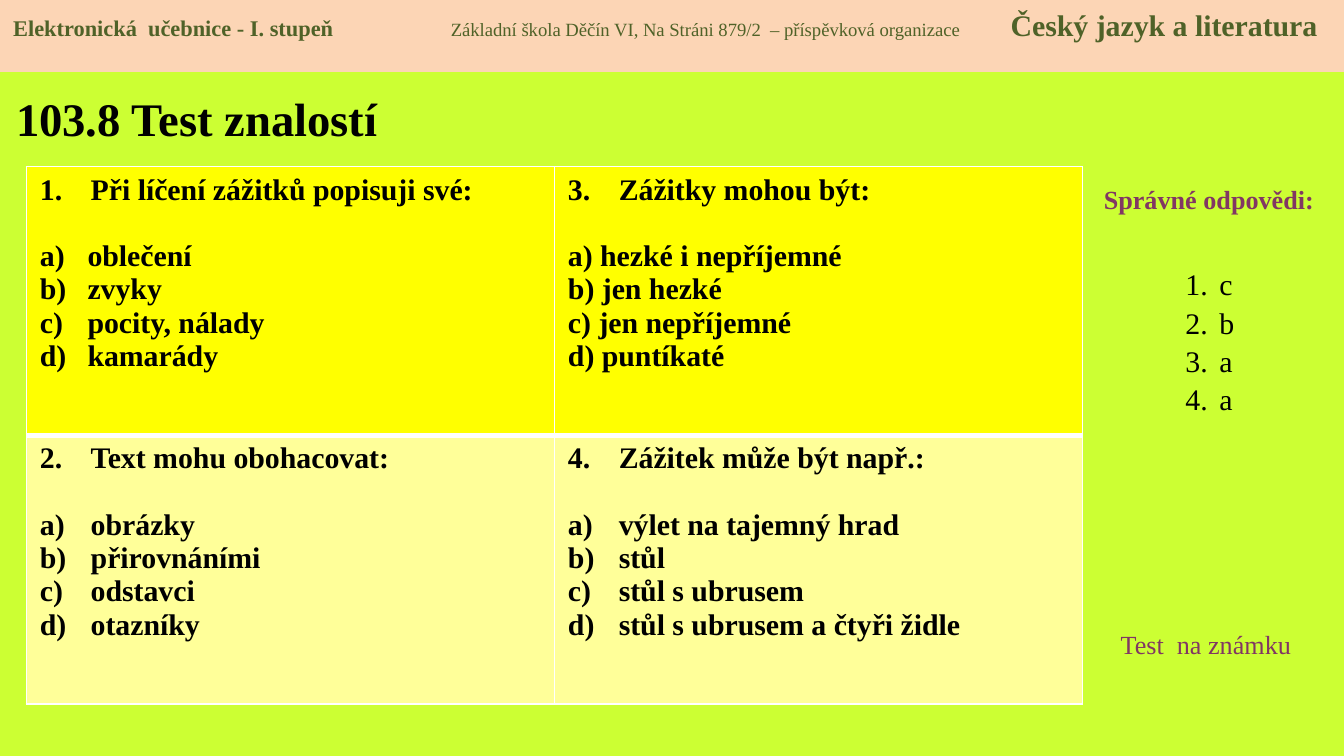
from dataclasses import dataclass
from typing import Optional

from lxml.etree import SubElement
from pptx import Presentation
from pptx.dml.color import RGBColor
from pptx.enum.shapes import MSO_SHAPE
from pptx.enum.text import MSO_ANCHOR, MSO_AUTO_SIZE, PP_ALIGN
from pptx.oxml.ns import qn
from pptx.util import Cm, Pt


@dataclass(frozen=True)
class Theme:
    face: str = "Times New Roman"
    back: str = "CCFF33"
    band: str = "FCD5B5"
    ink: str = "000000"
    green: str = "4F6228"
    plum: str = "813763"
    white: str = "FFFFFF"
    rows: tuple = ("FFFF00", "FFFF99")
    title: float = 25
    large: float = 16
    label: float = 14
    name: float = 12
    small: float = 10


@dataclass(frozen=True)
class Quiz:
    row: int
    col: int
    number: int
    ask: str
    options: tuple
    indent: Optional[float] = 0.96  # None: the letters are part of the text


@dataclass(frozen=True)
class Label:
    text: str
    box: tuple
    bold: bool
    align: PP_ALIGN


THEME = Theme()
QUIZZES = (
    Quiz(0, 0, 1, "Při líčení zážitků popisuji své:",
         ("oblečení", "zvyky", "pocity, nálady", "kamarády"), 0.9),
    Quiz(0, 1, 3, "Zážitky mohou být:",
         ("a) hezké i nepříjemné", "b) jen hezké",
          "c) jen nepříjemné", "d) puntíkaté"), None),
    Quiz(1, 0, 2, "Text mohu obohacovat:",
         ("obrázky", "přirovnáními", "odstavci", "otazníky")),
    Quiz(1, 1, 4, "Zážitek může být např.:",
         ("výlet na tajemný hrad", "stůl", "stůl s ubrusem",
          "stůl s ubrusem a čtyři židle")),
)
LABELS = (
    Label("Správné odpovědi:", (20.45, 3.35, 4.8, 0.86), True, PP_ALIGN.CENTER),
    Label("Test  na známku", (20.93, 11.76, 3.99, 0.86), False, PP_ALIGN.LEFT),
)
HEADER = (
    ("Elektronická  učebnice - I. stupeň", THEME.name, True),
    ("\tZákladní škola Děčín VI, Na Stráni 879/2  – příspěvková organizace",
     THEME.small, False),
    ("\tČeský jazyk a literatura", THEME.large, True),
)
TABS = (8.27, 18.85)
ANSWERS = ("c", "b", "a", "a")


def color(code: str) -> RGBColor:
    return RGBColor.from_string(code)


def style(font, size: float, code: str, bold: bool = False) -> None:
    font.name, font.size, font.bold = THEME.face, Pt(size), bold
    font.color.rgb = color(code)


def place(shape, box: tuple) -> None:
    shape.left, shape.top, shape.width, shape.height = map(Cm, box)


def count(para, kind: str, indent: float, start: int = 1) -> None:
    """Number a paragraph automatically with a hanging indent."""
    props = para._p.get_or_add_pPr()
    props.set("marL", str(Cm(indent)))
    props.set("indent", str(-Cm(indent)))
    mark = SubElement(props, qn("a:buAutoNum"), type=kind)
    if start > 1:
        mark.set("startAt", str(start))


def border(cell, low: bool, high: bool) -> None:
    """Draw white edges, with a thick one on the line between the rows."""
    props = cell._tc.get_or_add_tcPr()
    for side, thick in (("L", False), ("R", False), ("T", high), ("B", low)):
        line = SubElement(props, qn(f"a:ln{side}"), w=str(Pt(3 if thick else 1)))
        fill = SubElement(line, qn("a:solidFill"))
        SubElement(fill, qn("a:srgbClr"), val=THEME.white)


def draw_quiz(table, quiz: Quiz) -> None:
    cell = table.cell(quiz.row, quiz.col)
    border(cell, quiz.row == 0, quiz.row == 1)
    cell.fill.solid()
    cell.fill.fore_color.rgb = color(THEME.rows[quiz.row])
    frame = cell.text_frame
    frame.text = "\n".join((quiz.ask, *quiz.options))
    first, *rest = frame.paragraphs
    count(first, "arabicPeriod", 0.96, quiz.number)
    first.space_after = Pt(18)
    for para in rest:
        if quiz.indent is not None:
            count(para, "alphaLcParenR", quiz.indent)
    for para in frame.paragraphs:
        style(para.font, THEME.large, THEME.ink, True)


def draw_table(slide) -> None:
    frame = slide.shapes.add_table(2, 2, Cm(0.5), Cm(3.15), Cm(19.96), Cm(10.16))
    table = frame.table
    table.first_row = table.horz_banding = False
    for quiz in QUIZZES:
        draw_quiz(table, quiz)


def draw_title(shape) -> None:
    place(shape, (0.05, 1.4, 8.1, 1.65))
    frame = shape.text_frame
    frame.text = "103.8 Test znalostí"
    frame.auto_size = MSO_AUTO_SIZE.NONE
    frame.vertical_anchor = MSO_ANCHOR.MIDDLE
    para = frame.paragraphs[0]
    para.alignment = PP_ALIGN.LEFT
    style(para.font, THEME.title, THEME.ink, True)


def draw_answers(shape) -> None:
    place(shape, (22.15, 4.19, 1.4, 5.05))
    frame = shape.text_frame
    frame.text = "\n".join(ANSWERS)
    frame.auto_size = MSO_AUTO_SIZE.NONE
    frame.margin_top = Cm(0.84)
    for para in frame.paragraphs:
        count(para, "arabicPeriod", 0.64)
        para.space_before, para.space_after = Pt(0), Pt(1.3)
        style(para.font, THEME.large, THEME.ink)


def draw_label(slide, label: Label) -> None:
    frame = slide.shapes.add_textbox(*map(Cm, label.box)).text_frame
    frame.word_wrap = True
    frame.text = label.text
    para = frame.paragraphs[0]
    para.alignment = label.align
    style(para.font, THEME.label, THEME.plum, label.bold)


def draw_header(slide, width: int) -> None:
    band = slide.shapes.add_shape(MSO_SHAPE.RECTANGLE, 0, 0, width, Cm(1.36))
    band.shadow.inherit = False
    band.fill.solid()
    band.fill.fore_color.rgb = color(THEME.band)
    band.line.fill.background()
    frame = band.text_frame
    frame.vertical_anchor = MSO_ANCHOR.TOP
    para = frame.paragraphs[0]
    para.alignment = PP_ALIGN.LEFT
    stops = SubElement(para._p.get_or_add_pPr(), qn("a:tabLst"))
    for stop in TABS:
        SubElement(stops, qn("a:tab"), pos=str(Cm(stop)), algn="l")
    for text, size, bold in HEADER:
        run = para.add_run()
        run.text = text
        style(run.font, size, THEME.green, bold)


def main() -> None:
    deck = Presentation()
    deck.slide_width, deck.slide_height = Cm(25.4), Cm(14.29)
    slide = deck.slides.add_slide(deck.slide_layouts[1])
    slide.background.fill.solid()
    slide.background.fill.fore_color.rgb = color(THEME.back)
    draw_title(slide.shapes.title)
    draw_answers(slide.placeholders[1])
    draw_table(slide)
    for label in LABELS:
        draw_label(slide, label)
    draw_header(slide, deck.slide_width)
    deck.save("out.pptx")


if __name__ == "__main__":
    main()
